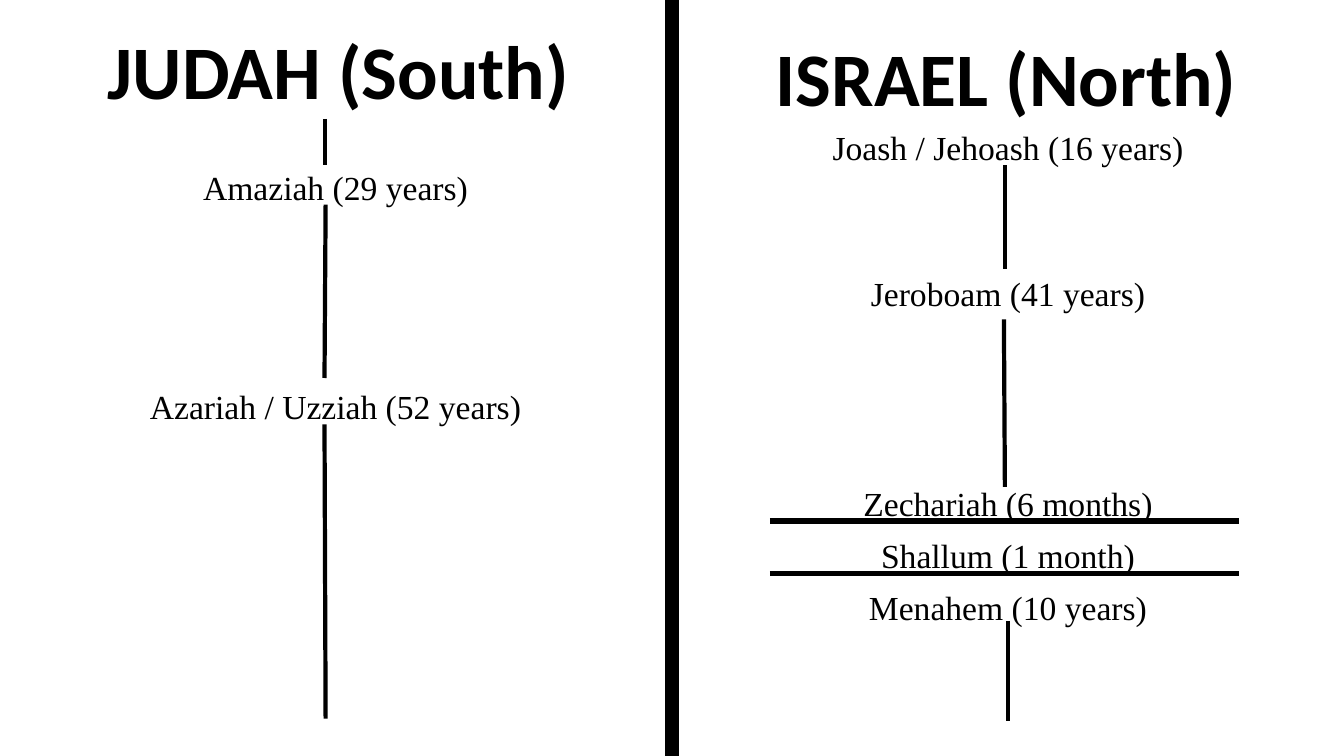
import pptx
import pptx.util
import pptx.dml.color
import pptx.enum.shapes
import pptx.enum.text
import pptx.oxml

Pt = pptx.util.Pt
BLACK = "000000"
WIDTH, HEIGHT = 960, 540
LIST_BOTTOM = 525

KINGDOMS = [
    {"heading": "JUDAH (South)", "heading_box": (38.9, 20.2, 406, 64.8),
     "list_box": (36.7, 118.6, 406),
     "kings": [("Amaziah (29 years)", 0), ("Azariah / Uzziah (52 years)", 130.9)]},
    {"heading": "ISRAEL (North)", "heading_box": (514.8, 25.2, 408.2, 64.8),
     "list_box": (517, 90, 406),
     "kings": [("Joash / Jehoash (16 years)", 0), ("Jeroboam (41 years)", 78.8),
               ("Zechariah (6 months)", 123.8), ("Shallum (1 month)", 11.2),
               ("Menahem (10 years)", 11.2)]},
]
SUCCESSIONS = [
    (232, 85, 232, 118), (232.6, 146.2, 231.8, 270), (231.8, 303.1, 232.6, 513.4),
    (717.8, 118, 717.8, 192.2), (717.1, 228.2, 717.8, 347.8), (720, 443.5, 720, 514.8),
]
DYNASTY_ENDS = [(550, y, 885, y) for y in (372.2, 409.7)]
DIVIDER = (WIDTH / 2, 0, WIDTH / 2, HEIGHT)

HEADING_FONT = {"name": "Calibri", "size": Pt(54), "bold": True}
KING_FONT = {"name": "Times New Roman", "size": Pt(24), "bold": False}


def color(hex_code):
    return pptx.dml.color.RGBColor.from_string(hex_code)


def apply(target, values):
    for name, value in values.items():
        setattr(target, name, value)


def fill_text(sp, box, anchor, lines, spacing, font):
    apply(sp, dict(zip(("left", "top", "width", "height"), map(Pt, box))))
    tf = sp.text_frame
    apply(tf, {"word_wrap": True, "vertical_anchor": anchor,
               "auto_size": pptx.enum.text.MSO_AUTO_SIZE.NONE})
    for i, (text, before) in enumerate(lines):
        p = tf.add_paragraph() if i else tf.paragraphs[0]
        apply(p, {"alignment": pptx.enum.text.PP_ALIGN.CENTER, "line_spacing": spacing,
                  "space_before": Pt(before), "space_after": Pt(0)})
        pPr = p._p.get_or_add_pPr()
        pPr.set("marL", "0")
        pPr.set("indent", "0")
        pPr.append(pptx.oxml.parse_xml(
            '<a:buNone xmlns:a="http://schemas.openxmlformats.org/drawingml/2006/main"/>'))
        r = p.add_run()
        r.text = text
        apply(r.font, font)
        r.font.color.rgb = color(BLACK)


def add_line(s, ends, weight):
    line = s.shapes.add_connector(pptx.enum.shapes.MSO_CONNECTOR.STRAIGHT, *map(Pt, ends))
    line.line.width = Pt(weight)
    line.line.color.rgb = color(BLACK)
    line._element.spPr.append(pptx.oxml.parse_xml(
        '<a:effectLst xmlns:a="http://schemas.openxmlformats.org/drawingml/2006/main"/>'))


def main():
    prs = pptx.Presentation()
    apply(prs, {"slide_width": Pt(WIDTH), "slide_height": Pt(HEIGHT)})
    s = prs.slides.add_slide(prs.slide_layouts.get_by_name("Comparison"))
    title, *bodies = s.placeholders
    title._element.getparent().remove(title._element)

    anchors = pptx.enum.text.MSO_ANCHOR
    for kingdom, heading, kings in zip(KINGDOMS, bodies[0::2], bodies[1::2]):
        fill_text(heading, kingdom["heading_box"], anchors.BOTTOM,
                  [(kingdom["heading"], 0)], 0.8, HEADING_FONT)
        left, top, width = kingdom["list_box"]
        fill_text(kings, (left, top, width, LIST_BOTTOM - top), anchors.TOP,
                  kingdom["kings"], 0.9, KING_FONT)

    for weight, lines in ((10.5, [DIVIDER]), (3, SUCCESSIONS), (4, DYNASTY_ENDS)):
        for ends in lines:
            add_line(s, ends, weight)
    prs.save("out.pptx")


if __name__ == "__main__":
    main()
